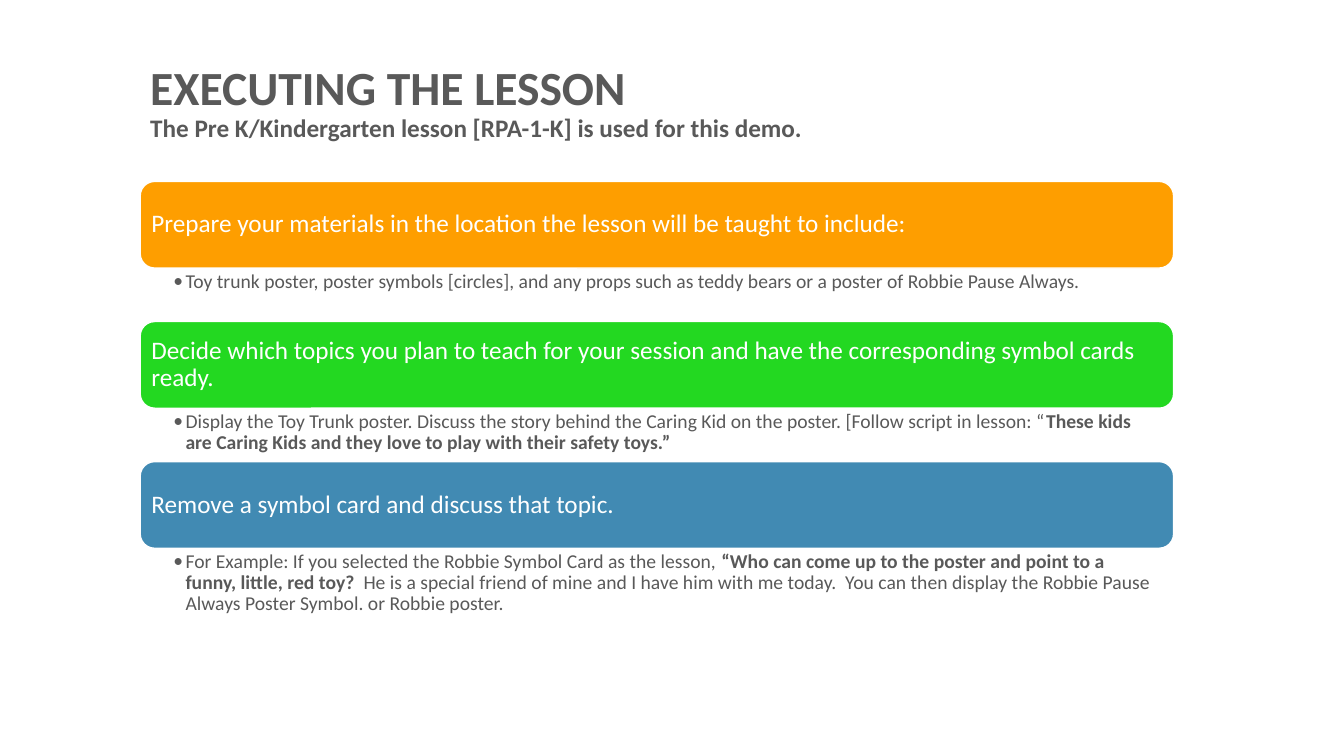
from pptx import Presentation
from pptx import util as u
from pptx.dml.color import RGBColor
from pptx.enum import shapes, text
from pptx.oxml.ns import qn
from lxml import etree

FONT, GREY, WHITE = "Calibri", "595959", "FFFFFF"
TITLE = [("EXECUTING THE LESSON", 34),
         ("The Pre K/Kindergarten lesson [RPA-1-K] is used for this demo.", 18)]
# Heading, bar colour, height of the detail box, detail runs as (words, bold)
STEPS = [
    ("Prepare your materials in the location the lesson will be taught to include:",
     "FE9E00", 0.53,
     [("Toy trunk poster, poster symbols [circles], and any props such as teddy bears "
       "or a poster of Robbie Pause Always.", False)]),
    ("Decide which topics you plan to teach for your session and have the "
     "corresponding symbol cards ready.",
     "23D821", 0.53,
     [("Display the Toy Trunk poster. Discuss the story behind the Caring Kid on the "
       "poster. [Follow script in lesson: “", False),
      ("These kids are Caring Kids and they love to play with their safety toys.”", True)]),
    ("Remove a symbol card and discuss that topic.",
     "418AB3", 0.77,
     [("For Example: If you selected the Robbie Symbol Card as the lesson, ", False),
      ("“Who can come up to the poster and point to a funny, little, red toy?  ", True),
      ("He is a special friend of mine and I have him with me today.  You can then "
       "display the Robbie Pause Always Poster Symbol. or Robbie poster.", False)]),
]
LEFT, WIDTH = 1.39, 10.25
TOP, BAR_HEIGHT = 1.8, 0.86


def color(value):
    return RGBColor.from_string(value)


def set_frame(frame, anchor, left, top, right, bottom):
    frame.word_wrap = True
    frame.auto_size = text.MSO_AUTO_SIZE.NONE
    frame.vertical_anchor = anchor
    frame.margin_left, frame.margin_top = u.Inches(left), u.Inches(top)
    frame.margin_right, frame.margin_bottom = u.Inches(right), u.Inches(bottom)


def set_paragraph(para):
    para.alignment = text.PP_ALIGN.LEFT
    para.line_spacing = 0.9
    para.space_before = u.Pt(0)


def add_run(para, words, size, fill, bold=False):
    span = para.add_run()
    span.text = words
    span.font.name = FONT
    span.font.size = u.Pt(size)
    span.font.bold = bold
    span.font.color.rgb = color(fill)


def add_bullet(para, indent):
    props = para._p.get_or_add_pPr()
    props.set("marL", str(u.Inches(indent)))
    props.set("indent", str(-u.Inches(indent)))
    etree.SubElement(props, qn("a:buFont")).set("typeface", FONT)
    etree.SubElement(props, qn("a:buChar")).set("char", "•")


def add_title(page):
    title = page.shapes.title
    title.left, title.top = u.Inches(LEFT), u.Inches(0.59)
    title.width, title.height = u.Inches(WIDTH), u.Inches(1.03)
    frame = title.text_frame
    set_frame(frame, text.MSO_ANCHOR.TOP, 0.1, 0.05, 0.1, 0.05)
    for index, (words, size) in enumerate(TITLE):
        para = frame.add_paragraph() if index else frame.paragraphs[0]
        set_paragraph(para)
        add_run(para, words, size, GREY, bold=True)


def add_bar(page, top, heading, fill):
    bar = page.shapes.add_shape(shapes.MSO_SHAPE.ROUNDED_RECTANGLE, u.Inches(LEFT),
                                u.Inches(top), u.Inches(WIDTH), u.Inches(BAR_HEIGHT))
    bar.shadow.inherit = False
    bar.fill.solid()
    bar.fill.fore_color.rgb = color(fill)
    bar.line.color.rgb = color(WHITE)
    bar.line.width = u.Pt(1)
    # The preset's own text area already insets the text by 0.04 inch
    set_frame(bar.text_frame, text.MSO_ANCHOR.MIDDLE, 0.07, 0.07, 0.07, 0.07)
    para = bar.text_frame.paragraphs[0]
    set_paragraph(para)
    add_run(para, heading, 18, WHITE)


def add_detail(page, top, height, runs):
    box = page.shapes.add_textbox(u.Inches(LEFT), u.Inches(top),
                                  u.Inches(WIDTH), u.Inches(height))
    set_frame(box.text_frame, text.MSO_ANCHOR.TOP, 0.33, 0.03, 0.14, 0.03)
    para = box.text_frame.paragraphs[0]
    add_bullet(para, 0.12)
    set_paragraph(para)
    for words, bold in runs:
        add_run(para, words, 14, GREY, bold)


def main():
    deck = Presentation()
    deck.slide_width, deck.slide_height = u.Inches(13.33), u.Inches(7.5)
    page = deck.slides.add_slide(deck.slide_layouts[5])
    add_title(page)
    top = TOP
    for heading, fill, detail_height, runs in STEPS:
        add_bar(page, top, heading, fill)
        add_detail(page, top + BAR_HEIGHT, detail_height, runs)
        top += BAR_HEIGHT + detail_height
    deck.save("out.pptx")


if __name__ == "__main__":
    main()
